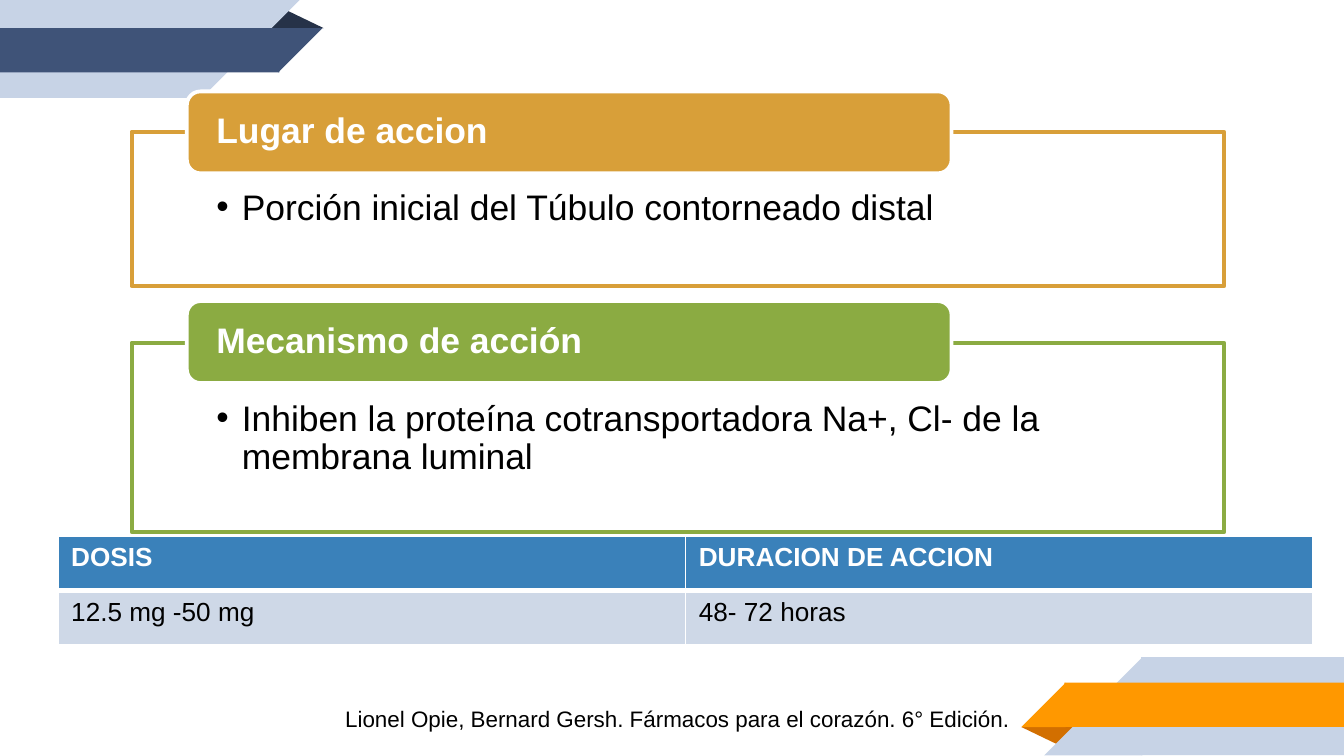
from dataclasses import dataclass

import pptx
import pptx.util
from lxml import etree
from pptx.dml.color import RGBColor
from pptx.enum.shapes import MSO_SHAPE
from pptx.enum.text import MSO_ANCHOR, PP_ALIGN
from pptx.oxml.ns import qn
from pptx.util import Inches

WHITE = RGBColor(0xFF, 0xFF, 0xFF)
BLACK = RGBColor(0, 0, 0)
PALE = RGBColor(0xC7, 0xD3, 0xE6)
NAVY = RGBColor(0x3F, 0x53, 0x78)
DARK_NAVY = RGBColor(0x26, 0x32, 0x48)
ORANGE = RGBColor(0xFF, 0x98, 0x00)
DARK_ORANGE = RGBColor(0xD2, 0x6F, 0x00)
GOLD = RGBColor(0xD8, 0x9F, 0x39)
GREEN = RGBColor(0x8B, 0xAB, 0x42)
HEADER_BLUE = RGBColor(0x3A, 0x81, 0xBA)
ROW_BLUE = RGBColor(0xCE, 0xD8, 0xE7)


@dataclass
class Part:
    kind: MSO_SHAPE
    left: float
    top: float
    width: float
    height: float
    color: RGBColor
    rotation: float = 0


@dataclass
class Card:
    title: str
    body: str
    tab_top: float
    top: float
    height: float
    color: RGBColor


RECT, CORNER, FOLD = MSO_SHAPE.RECTANGLE, MSO_SHAPE.RIGHT_TRIANGLE, MSO_SHAPE.ISOSCELES_TRIANGLE

RIBBONS = [
    Part(FOLD, 7.6, 5.41, 0.43, 0.14, DARK_ORANGE, 180),
    Part(RECT, 8.49, 4.89, 1.51, 0.73, PALE),
    Part(CORNER, 7.77, 4.89, 0.73, 0.73, PALE, 270),
    Part(RECT, 7.92, 5.08, 2.08, 0.33, ORANGE),
    Part(CORNER, 7.6, 5.08, 0.33, 0.33, ORANGE, 270),
    Part(FOLD, 1.98, 0.07, 0.43, 0.14, DARK_NAVY),
    Part(RECT, 0, 0, 1.51, 0.73, PALE),
    Part(CORNER, 1.5, 0, 0.73, 0.73, PALE, 90),
    Part(RECT, 0, 0.21, 2.08, 0.33, NAVY),
    Part(CORNER, 2.07, 0.21, 0.33, 0.33, NAVY, 90),
]

CARDS = [
    Card("Lugar de accion", "Porción inicial del Túbulo contorneado distal",
         0.68, 0.98, 1.15, GOLD),
    Card("Mecanismo de acción",
         "Inhiben la proteína cotransportadora Na+, Cl- de la membrana luminal",
         2.24, 2.55, 1.41, GREEN),
]

ROWS = [("DOSIS", "DURACION DE ACCION"), ("12.5 mg -50 mg", "48- 72 horas")]


def add_part(s, part: Part):
    sp = s.shapes.add_shape(part.kind, Inches(part.left), Inches(part.top),
                            Inches(part.width), Inches(part.height))
    sp.shadow.inherit = False
    sp.fill.solid()
    sp.fill.fore_color.rgb = part.color
    sp.line.fill.background()
    sp.rotation = part.rotation
    if part.kind == FOLD:
        sp.adjustments[0] = 0.324
    return sp


def outline(sp, color: RGBColor) -> None:
    sp.line.color.rgb = color
    sp.line.width = pptx.util.Pt(2)


def add_run(p, text: str, size: float, color: RGBColor, bold: bool = False) -> None:
    r = p.add_run()
    r.text = text
    r.font.name = "Arial"
    r.font.size = pptx.util.Pt(size)
    r.font.color.rgb = color
    r.font.bold = bold


def fill_frame(tf, text: str, color: RGBColor, anchor: MSO_ANCHOR,
               side: float, top: float, bottom: float, bold: bool = False):
    tf.word_wrap = True
    tf.vertical_anchor = anchor
    tf.margin_left = tf.margin_right = Inches(side)
    tf.margin_top, tf.margin_bottom = Inches(top), Inches(bottom)
    p = tf.paragraphs[0]
    p.alignment = PP_ALIGN.LEFT
    p.line_spacing = 0.9
    add_run(p, text, 19, color, bold)
    return p


def add_bullet(p) -> None:
    pPr = p._p.get_or_add_pPr()
    pPr.set("marL", str(Inches(0.19)))
    pPr.set("indent", str(-Inches(0.19)))
    etree.SubElement(pPr, qn("a:buFont")).set("typeface", "Arial")
    etree.SubElement(pPr, qn("a:buChar")).set("char", "•")


def add_card(s, card: Card) -> None:
    frame = add_part(s, Part(RECT, 0.98, card.top, 8.13, card.height, WHITE))
    outline(frame, card.color)
    add_bullet(fill_frame(frame.text_frame, card.body, BLACK, MSO_ANCHOR.TOP,
                          0.63, 0.43, 0.15))
    tab = add_part(s, Part(MSO_SHAPE.ROUNDED_RECTANGLE, 1.39, card.tab_top,
                           5.69, 0.61, card.color))
    outline(tab, WHITE)
    fill_frame(tab.text_frame, card.title, WHITE, MSO_ANCHOR.MIDDLE, 0.19, 0, 0, True)


def add_borders(cell, widths: dict[str, float]) -> None:
    """Draw white cell borders; must run before the cell's fill is set."""
    tcPr = cell._tc.get_or_add_tcPr()
    for side, width in widths.items():
        ln = etree.SubElement(tcPr, qn(f"a:ln{side}"), w=str(pptx.util.Pt(width)))
        fill = etree.SubElement(ln, qn("a:solidFill"))
        etree.SubElement(fill, qn("a:srgbClr"), val=str(WHITE))


def add_dose_table(s) -> None:
    table = s.shapes.add_table(2, 2, Inches(0.43), Inches(3.99),
                               Inches(9.34), Inches(0.81)).table
    for i, row in enumerate(ROWS):
        header = i == 0
        for j, text in enumerate(row):
            cell = table.cell(i, j)
            add_borders(cell, {"L": 1, "R": 1, "T": 1 if header else 3,
                               "B": 3 if header else 1})
            cell.fill.solid()
            cell.fill.fore_color.rgb = HEADER_BLUE if header else ROW_BLUE
            add_run(cell.text_frame.paragraphs[0], text, 14,
                    WHITE if header else BLACK, header)


def add_citation(s) -> None:
    tf = s.shapes.add_textbox(Inches(2.47), Inches(5.2),
                              Inches(5.87), Inches(0.3)).text_frame
    tf.word_wrap = True
    add_run(tf.paragraphs[0],
            "Lionel Opie, Bernard Gersh. Fármacos para el corazón. 6° Edición.", 12, BLACK)


def main() -> None:
    prs = pptx.Presentation()
    prs.slide_width = Inches(10)
    prs.slide_height = prs.slide_width * 9 // 16
    s = prs.slides.add_slide(prs.slide_layouts[6])
    for part in RIBBONS:
        add_part(s, part)
    add_dose_table(s)
    for card in CARDS:
        add_card(s, card)
    add_citation(s)
    prs.save("out.pptx")


if __name__ == "__main__":
    main()
